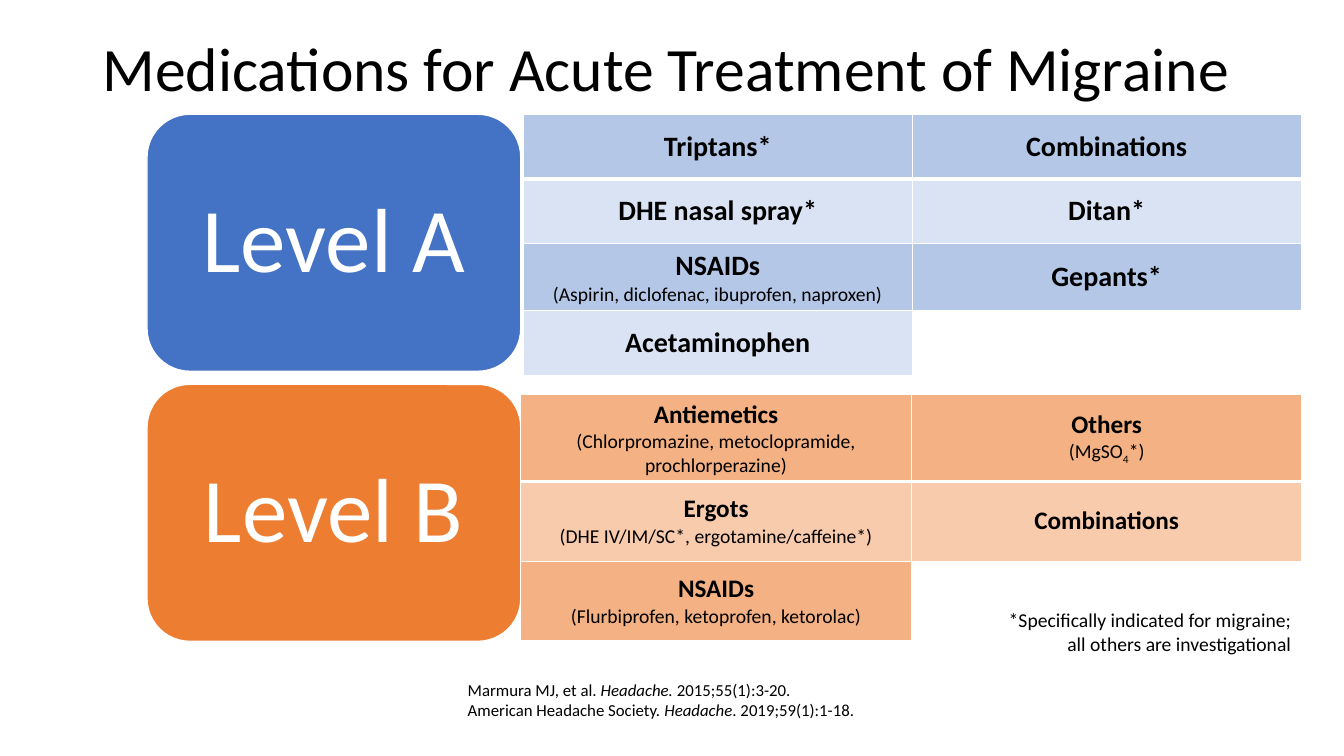
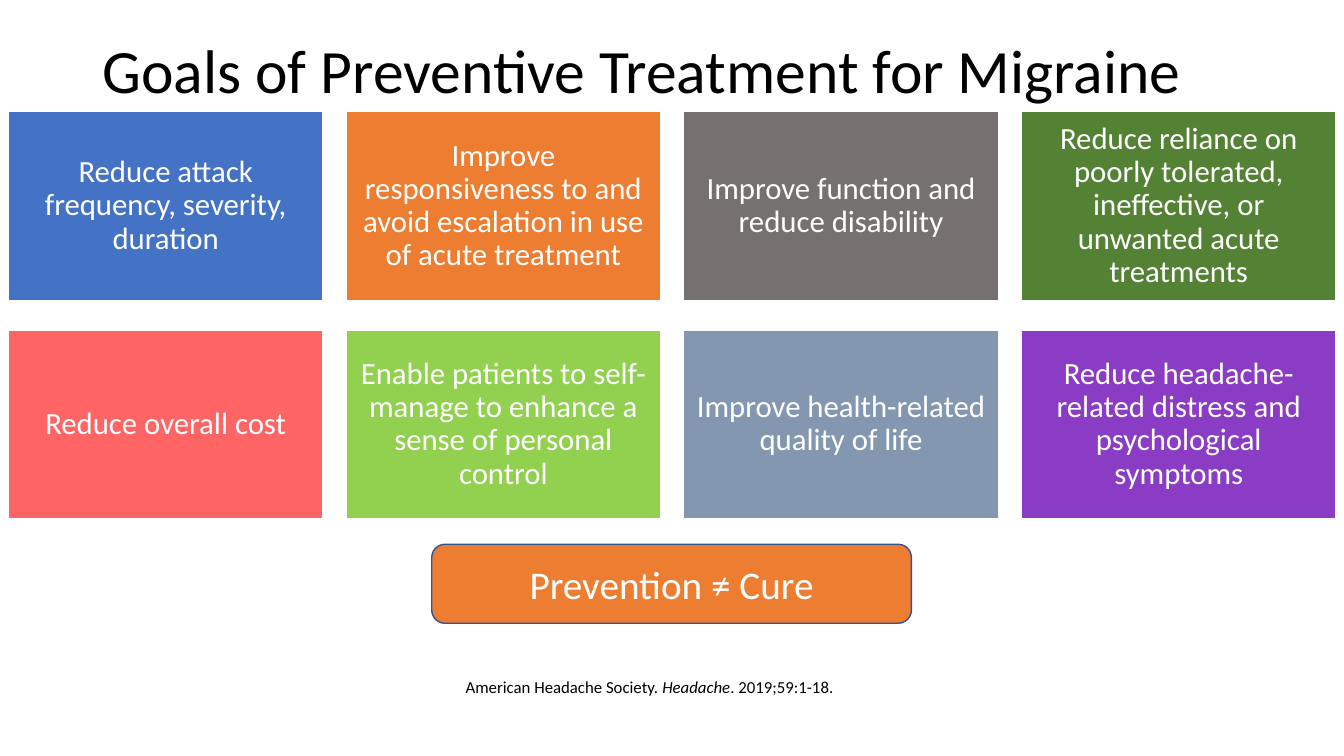
from dataclasses import dataclass, replace

from lxml.etree import SubElement
from pptx import Presentation
from pptx.dml.color import RGBColor
from pptx.enum.shapes import MSO_SHAPE as Shape
from pptx.enum.text import MSO_ANCHOR as Anchor, MSO_AUTO_SIZE as AutoSize, PP_ALIGN as Align
from pptx.oxml.ns import qn
from pptx.util import Inches, Pt


@dataclass(frozen=True)
class Type:
    size: int
    color: str = "000000"
    bold: bool = False
    italic: bool = False
    baseline: int = 0


@dataclass(frozen=True)
class Theme:
    font: str = "Calibri"
    white: str = "FFFFFF"
    blue: str = "4472C4"
    orange: str = "ED7D31"
    gray: str = "767171"
    green: str = "548235"
    coral: str = "FF6565"
    lime: str = "92D050"
    slate: str = "8497B0"
    purple: str = "8A3CC4"
    outline: str = "325491"
    blue_bands: tuple = ("B4C7E7", "DAE3F3")
    orange_bands: tuple = ("F4B183", "F8CBAD")
    title: Type = Type(44)
    level: Type = Type(65, "FFFFFF")
    goal: Type = Type(22, "FFFFFF")
    callout: Type = Type(28, "FFFFFF")
    first_line: Type = Type(20, bold=True)
    second_line: Type = Type(18, bold=True)
    detail: Type = Type(14)
    source: Type = Type(12)


THEME = Theme()
COLUMNS, ROWS = 160, 90


class Deck:
    def __init__(self, theme):
        self.theme = theme
        self.file = Presentation()
        self.file.slide_width, self.file.slide_height = Inches(13.33), Inches(7.5)
        self.slide = None

    def across(self, columns):
        return round(self.file.slide_width * columns / COLUMNS)

    def down(self, rows):
        return round(self.file.slide_height * rows / ROWS)

    def place(self, left, top, width, height):
        return self.across(left), self.down(top), self.across(width), self.down(height)

    def set_text(self, frame, paragraphs, align=Align.LEFT, anchor=Anchor.MIDDLE, spacing=1.0):
        frame.word_wrap = True
        frame.vertical_anchor = anchor
        self.fill_paragraphs(frame, paragraphs, align, spacing)

    def fill_paragraphs(self, frame, paragraphs, align, spacing=1.0):
        for index, runs in enumerate(paragraphs):
            paragraph = frame.add_paragraph() if index else frame.paragraphs[0]
            paragraph.alignment = align
            paragraph.line_spacing = spacing
            for text, style in runs:
                run = paragraph.add_run()
                run.text = text
                font = run.font
                font.name, font.size = self.theme.font, Pt(style.size)
                font.bold, font.italic = style.bold, style.italic
                font.color.rgb = RGBColor.from_string(style.color)
                if style.baseline:
                    run._r.get_or_add_rPr().set("baseline", str(style.baseline * 1000))

    def new_slide(self, heading, top=0):
        self.slide = self.file.slides.add_slide(self.file.slide_layouts[5])
        title = self.slide.shapes.title
        title.left, title.top, title.width, title.height = self.place(11, top, 138, 17.4)
        title.text_frame.auto_size = AutoSize.NONE
        self.set_text(title.text_frame, [[(heading, self.theme.title)]], spacing=0.9)

    def panel(self, kind, box, fill, text, style, line=None, spacing=0.9):
        panel = self.slide.shapes.add_shape(kind, *self.place(*box))
        panel.shadow.inherit = False
        panel.fill.solid()
        panel.fill.fore_color.rgb = RGBColor.from_string(fill)
        panel.line.color.rgb = RGBColor.from_string(line or self.theme.white)
        panel.line.width = Pt(1)
        frame = panel.text_frame
        frame.margin_left = frame.margin_right = Inches(0.09)
        frame.margin_top = frame.margin_bottom = Inches(0.09)
        self.set_text(frame, [[(text, style)]], Align.CENTER, spacing=spacing)

    def text(self, box, paragraphs, align=Align.LEFT, wrap=True):
        frame = self.slide.shapes.add_textbox(*self.place(*box)).text_frame
        self.set_text(frame, paragraphs, align, Anchor.TOP)
        frame.word_wrap = wrap
        frame.auto_size = AutoSize.SHAPE_TO_FIT_TEXT

    def sources(self, box, citations):
        plain = self.theme.source
        slanted = replace(plain, italic=True)
        self.text(box, [[(author, plain), (journal, slanted), (issue, plain)]
                        for author, journal, issue in citations], wrap=False)

    def border(self, cell, bottom):
        properties = cell._tc.get_or_add_tcPr()
        for side in ("lnL", "lnR", "lnT", "lnB"):
            width = bottom if side == "lnB" else 1
            line = SubElement(properties, qn(f"a:{side}"), w=str(Pt(width)))
            SubElement(SubElement(line, qn("a:solidFill")), qn("a:srgbClr"), val=self.theme.white)

    def table(self, left, top, column, heights, bands, rows):
        box = self.place(left, top, 2 * column, sum(heights))
        table = self.slide.shapes.add_table(len(rows), 2, *box).table
        table.first_row = table.horz_banding = False
        for table_column in table.columns:
            table_column.width = self.across(column)
        for r, (height, row) in enumerate(zip(heights, rows)):
            table.rows[r].height = self.down(height)
            for c, paragraphs in enumerate(row):
                cell = table.cell(r, c)
                self.border(cell, 1 if r else 3)
                if not paragraphs:
                    cell.fill.background()
                    continue
                cell.fill.solid()
                cell.fill.fore_color.rgb = RGBColor.from_string(bands[r % 2])
                cell.vertical_anchor = Anchor.MIDDLE
                self.fill_paragraphs(cell.text_frame, paragraphs, Align.CENTER)


def drug(name, style, detail=None):
    heading = [(name, style)]
    return [heading, [(detail, THEME.detail)]] if detail else [heading]


def acute_treatment(deck):
    deck.new_slide("Medications for Acute Treatment of Migraine", -0.2)
    levels = (("Level A", THEME.blue), ("Level B", THEME.orange))
    for index, (level, color) in enumerate(levels):
        deck.panel(Shape.ROUNDED_RECTANGLE, (17.5, 13.6 + 32.15 * index, 44.5, 30.6),
                   color, level, THEME.level)
    deck.sources((54.5, 80.3, 49, 6), [
        ("Marmura MJ, et al. ", "Headache.", " 2015;55(1):3-20."),
        ("American Headache Society. ", "Headache", ". 2019;59(1):1-18."),
    ])
    a, b, detail = THEME.first_line, THEME.second_line, THEME.detail
    deck.table(62.3, 13.6, 46.3, (7.7, 7.7, 7.9, 7.7), THEME.blue_bands, [
        (drug("Triptans*", a), drug("Combinations", a)),
        (drug("DHE nasal spray*", a), drug("Ditan*", a)),
        (drug("NSAIDs", a, "(Aspirin, diclofenac, ibuprofen, naproxen)"), drug("Gepants*", a)),
        (drug("Acetaminophen", a), None),
    ])
    magnesium = [("(MgSO", detail), ("4", replace(detail, baseline=-25)), ("*)", detail)]
    deck.table(62, 46.9, 46.5, (9.5, 9.5, 9.5), THEME.orange_bands, [
        (drug("Antiemetics", b, "(Chlorpromazine, metoclopramide, prochlorperazine)"),
         drug("Others", b) + [magnesium]),
        (drug("Ergots", b, "(DHE IV/IM/SC*, ergotamine/caffeine*)"), drug("Combinations", b)),
        (drug("NSAIDs", b, "(Flurbiprofen, ketoprofen, ketorolac)"), None),
    ])
    deck.text((117.1, 71.8, 37.8, 6.8), [[
        ("*Specifically indicated for migraine; all others are investigational", detail),
    ]], Align.RIGHT)


def preventive_goals(deck):
    deck.new_slide("Goals of Preventive Treatment for Migraine")
    deck.sources((54.25, 80, 46.7, 3.6), [
        ("American Headache Society. ", "Headache", ". 2019;59:1-18."),
    ])
    goals = (
        ("Reduce attack frequency, severity, duration", THEME.blue),
        ("Improve responsiveness to and avoid escalation in use of acute treatment", THEME.orange),
        ("Improve function and reduce disability", THEME.gray),
        ("Reduce reliance on poorly tolerated, ineffective, or unwanted acute treatments",
         THEME.green),
        ("Reduce overall cost", THEME.coral),
        ("Enable patients to self-manage to enhance a sense of personal control", THEME.lime),
        ("Improve health-related quality of life", THEME.slate),
        ("Reduce headache-related distress and psychological symptoms", THEME.purple),
    )
    for index, (goal, color) in enumerate(goals):
        row, column = divmod(index, 4)
        deck.panel(Shape.RECTANGLE, (1 + 40.2 * column, 13.3 + 26 * row, 37.45, 22.45),
                   color, goal, THEME.goal)
    deck.panel(Shape.ROUNDED_RECTANGLE, (51.4, 64.8, 57.1, 9.4), THEME.orange,
               "Prevention ≠ Cure", THEME.callout, THEME.outline, spacing=1.0)


def main():
    deck = Deck(THEME)
    acute_treatment(deck)
    preventive_goals(deck)
    deck.file.save("out.pptx")


if __name__ == "__main__":
    main()
